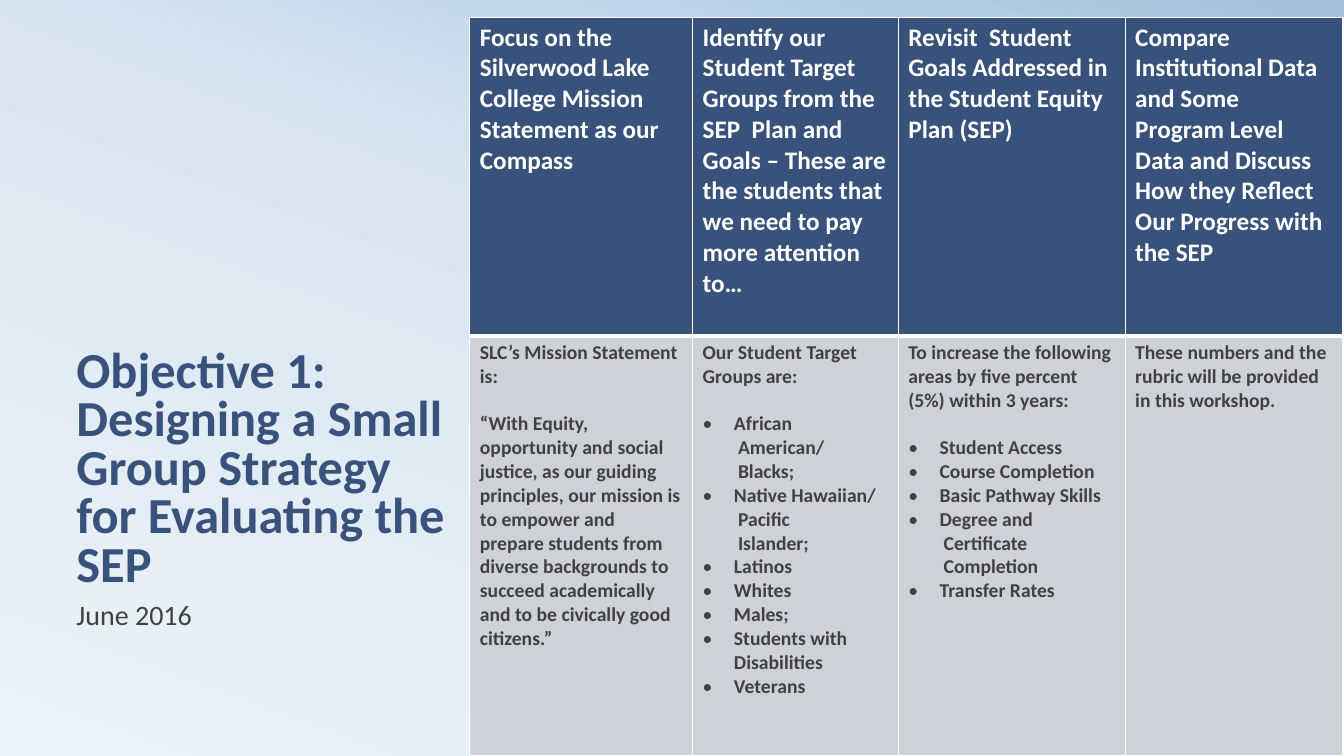
from copy import deepcopy

from pptx import Presentation
from pptx.dml.color import RGBColor
from pptx.enum.text import MSO_ANCHOR
from pptx.oxml import parse_xml
from pptx.oxml.ns import nsdecls, qn
from pptx.oxml.xmlchemy import OxmlElement
from pptx.util import Inches, Pt

NAVY, GRAY, WHITE, TEXT = "39527B", "CED1D7", "FFFFFF", "404040"
STOPS = [(0, "ECF3F8"), (0.58, "D9E6F2"), (1, "A1C1DE")]
WIDTHS = [2.21, 2.04, 2.25, 2.16]
HEIGHTS = [3.16, 4.17]
HEAD = {"size": Pt(18), "bold": True, "color": WHITE}
BODY = {"size": Pt(14), "bold": True, "color": TEXT}
BULLET, MORE = "•", "+"  # markers: bulleted line, its indented continuation

HEADS = [
    ["Focus on the Silverwood Lake College Mission Statement as our Compass"],
    ["Identify our",
     "Student Target Groups from the SEP  Plan and Goals – These are the "
     "students that we need to pay more attention to…"],
    ["Revisit  Student Goals Addressed in the Student Equity Plan (SEP)"],
    ["Compare Institutional Data and Some Program Level Data and Discuss "
     "How they Reflect Our Progress with the SEP"],
]
BODIES = [
    ["SLC’s Mission Statement is:",
     "“With Equity, opportunity and social justice, as our guiding principles, "
     "our mission is to empower and prepare students from diverse backgrounds "
     "to succeed academically and to be civically good citizens.”"],
    ["Our Student Target Groups are:",
     "•African", "+American/", "+Blacks;",
     "•Native Hawaiian/", "+Pacific", "+Islander;",
     "•Latinos", "•Whites", "•Males;", "•Students with Disabilities",
     "•Veterans"],
    ["To increase the following areas by five percent (5%) within 3 years:",
     "•Student Access", "•Course Completion", "•Basic Pathway Skills",
     "•Degree and", "+Certificate", "+Completion", "•Transfer Rates"],
    ["These numbers and the rubric will be provided in this workshop."],
]


def rgb(code):
    return RGBColor.from_string(code)


def style(font, look):
    font.name = "Calibri"
    for key, value in look.items():
        if key == "color":
            font.color.rgb = rgb(value)
        else:
            setattr(font, key, value)


def paint_back(slide):
    fill = slide.background.fill
    fill.gradient()
    fill.gradient_angle = 70
    stops = next(slide.element.iter(qn("a:gsLst")))
    stops.append(deepcopy(stops[-1]))
    for stop, (place, code) in zip(fill.gradient_stops, STOPS):
        stop.position = place
        stop.color.rgb = rgb(code)


def add_text(slide, box, text, look, anchor, spacing):
    frame = slide.shapes.add_textbox(*map(Inches, box)).text_frame
    frame.word_wrap = True
    frame.vertical_anchor = anchor
    para = frame.paragraphs[0]
    para.text = text
    para.line_spacing = spacing
    for run in para.runs:
        style(run.font, look)


def indent(para, mark):
    """Hang a bullet, or align a continuation line under it."""
    props = para._p.get_or_add_pPr()
    if mark == BULLET:
        props.set("marL", str(Inches(0.31)))
        props.set("indent", str(-Inches(0.31)))
        for tag, key, value in (("a:buFont", "typeface", "Calibri"),
                                ("a:buChar", "char", BULLET)):
            part = OxmlElement(tag)
            part.set(key, value)
            props.append(part)
    else:
        props.set("marL", str(Inches(0.35)))


def add_border(cell, side, width):
    cell._tc.get_or_add_tcPr().append(parse_xml(
        f'<a:ln{side} {nsdecls("a")} w="{Pt(width)}"><a:solidFill>'
        f'<a:srgbClr val="{WHITE}"/></a:solidFill></a:ln{side}>'))


def fill_cell(cell, lines, look, color, thick):
    """Write the lines in a cell whose thick side parts head from body."""
    for side in "LRTB":
        add_border(cell, side, 3 if side == thick else 1)
    cell.fill.solid()
    cell.fill.fore_color.rgb = rgb(color)
    frame = cell.text_frame
    for i, line in enumerate(lines):
        para = frame.add_paragraph() if i else frame.paragraphs[0]
        if line[0] in (BULLET, MORE):
            indent(para, line[0])
            line = line[1:]
        run = para.add_run()
        run.text = line
        style(run.font, look)


def add_grid(slide):
    box = 4.66, 0.17, sum(WIDTHS), sum(HEIGHTS)
    table = slide.shapes.add_table(2, 4, *map(Inches, box)).table
    table.horz_banding = False
    for row, height in zip(table.rows, HEIGHTS):
        row.height = Inches(height)
    for i, width in enumerate(WIDTHS):
        table.columns[i].width = Inches(width)
        fill_cell(table.cell(0, i), HEADS[i], HEAD, NAVY, "B")
        body = table.cell(1, i)
        fill_cell(body, BODIES[i], BODY, GRAY, "T")
        if len(BODIES[i]) > 1:
            body.text_frame.paragraphs[0].space_after = Pt(17)


def main():
    deck = Presentation()
    deck.slide_width, deck.slide_height = Inches(13.33), Inches(7.5)
    slide = deck.slides.add_slide(deck.slide_layouts[6])
    paint_back(slide)
    add_text(slide, (0.66, 0.75, 4.33, 5.17),
             "Objective 1:\vDesigning a Small Group Strategy \v"
             "for Evaluating the SEP",
             {"size": Pt(36), "bold": True, "color": NAVY},
             MSO_ANCHOR.BOTTOM, 0.8)
    add_grid(slide)
    add_text(slide, (0.66, 5.92, 4.33, 0.83), "June 2016",
             {"size": Pt(20), "color": TEXT}, MSO_ANCHOR.TOP, 0.9)
    deck.save("out.pptx")


if __name__ == "__main__":
    main()
